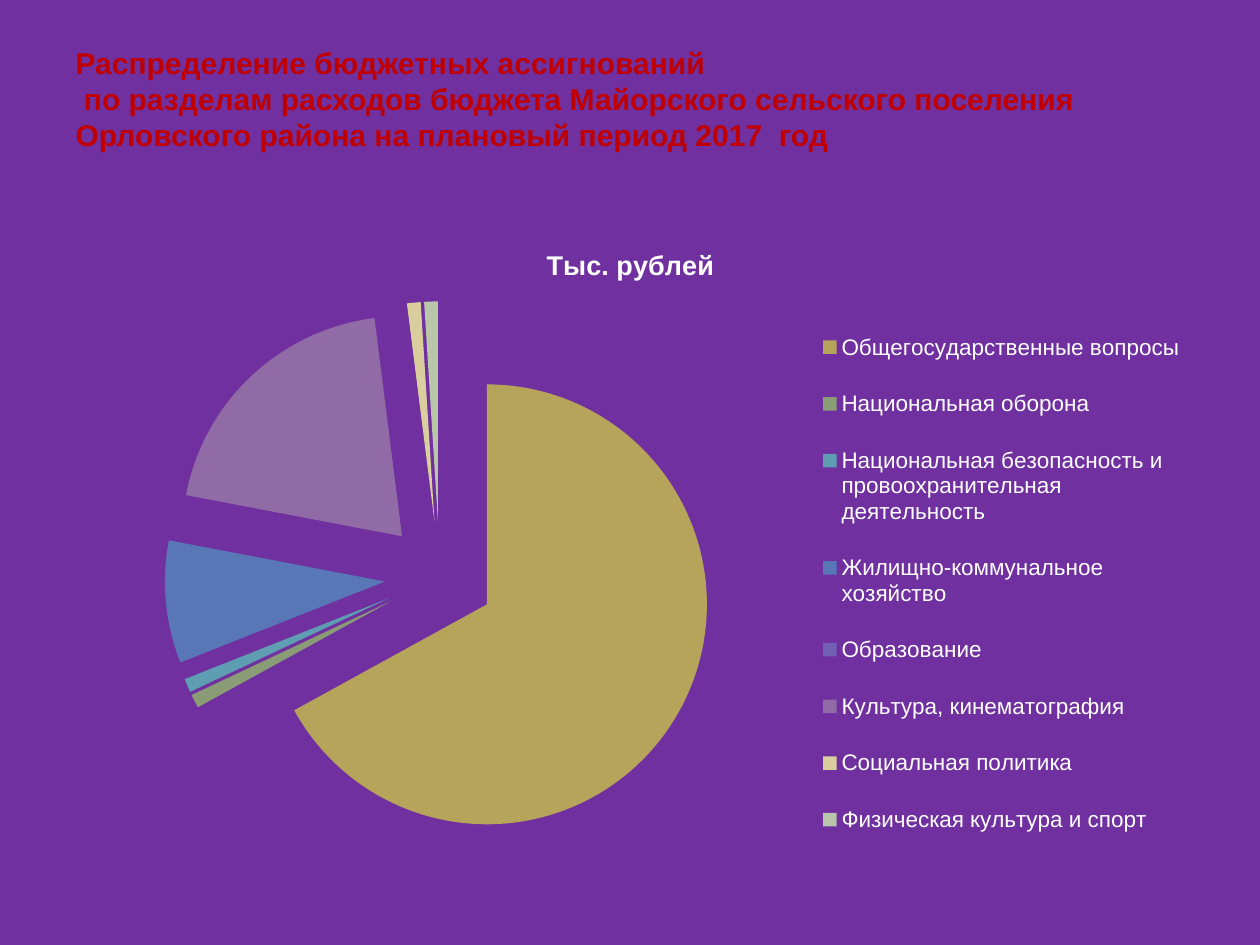
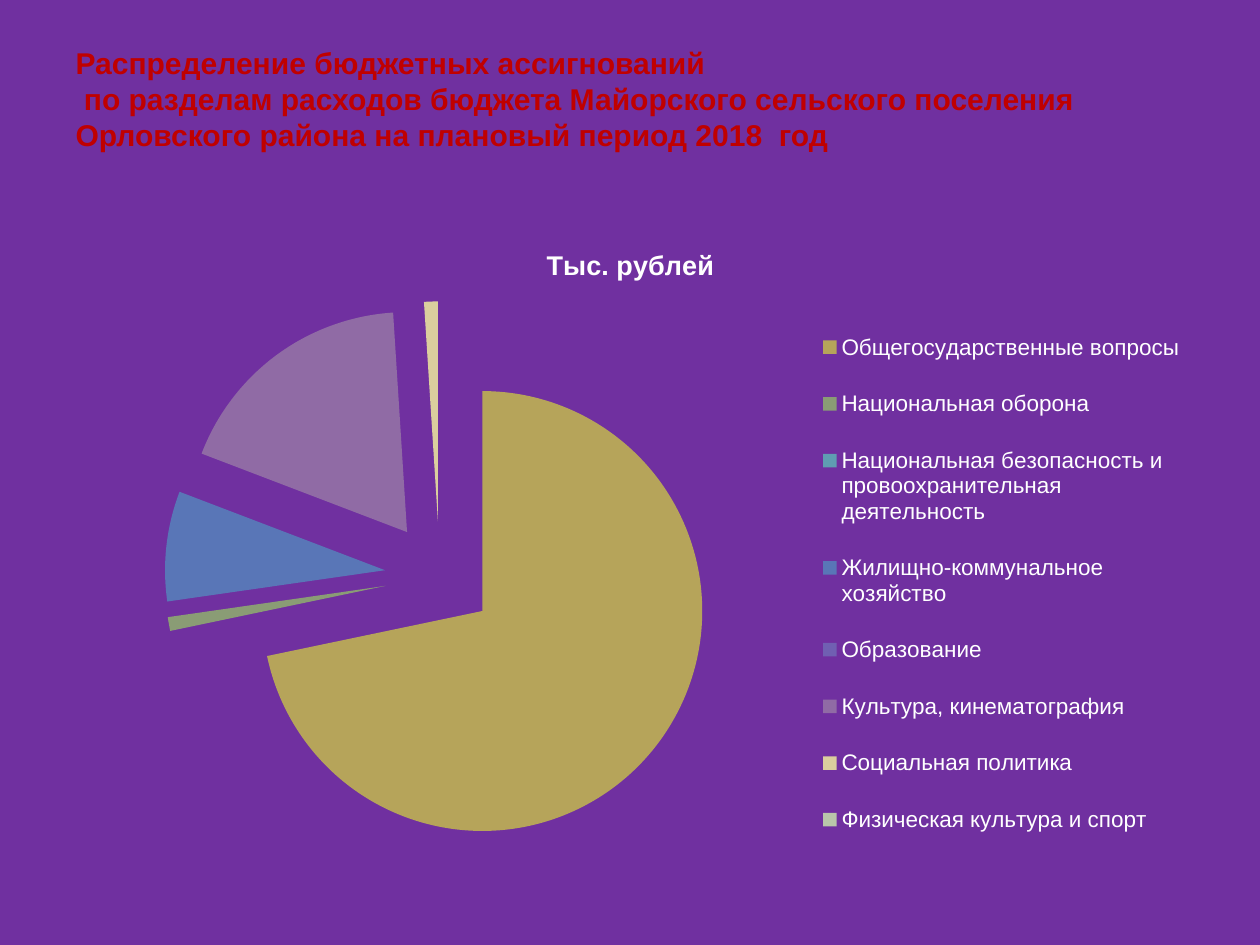
from pptx import Presentation
from pptx.chart.data import CategoryChartData
from pptx.dml.color import RGBColor
from pptx.enum.chart import XL_CHART_TYPE as ChartType, XL_LEGEND_POSITION as LegendPosition
from pptx.enum.text import MSO_ANCHOR as Anchor
from pptx.oxml import parse_xml
from pptx.oxml.ns import nsdecls
from pptx.util import Inches, Pt

FONT = "Arial"
PURPLE, RED, WHITE = "7030A0", "C00000", "FFFFFF"
HEADING = (
    "Распределение бюджетных ассигнований\v"
    " по разделам расходов бюджета Майорского сельского поселения "
    "Орловского района на плановый период {year}  год"
)
UNIT = "Тыс. рублей"
SECTIONS = {
    "Общегосударственные вопросы": "B6A45A",
    "Национальная оборона": "8A9C75",
    "Национальная безопасность и провоохранительная деятельность": "5F9DB2",
    "Жилищно-коммунальное хозяйство": "5976B7",
    "Образование": "705FB2",
    "Культура, кинематография": "906BA5",
    "Социальная политика": "DBCE9E",
    "Физическая культура и спорт": "B9C6AA",
}
SPENDING = {
    2017: [67, 1, 1, 9, 0, 20, 1, 1],
    2018: [71, 1, 0, 8, 0, 18, 1, 0],
}
EXPLOSION = 25

# Left, top, width, height in inches on the page
CHART_AREA = (0.76, 2.51, 12.49, 7.1)
PIE_AREA = (1.83, 3.35, 6.11, 6.11)
LEGEND_AREA = (9.05, 3.37, 4.15, 6.23)


def color(value):
    return RGBColor.from_string(value)


def style_font(font, size, fill, bold=False):
    font.name, font.size, font.bold = FONT, Pt(size), bold
    font.color.rgb = color(fill)


def add_heading(page, year):
    box = page.shapes.add_textbox(Inches(0.7), Inches(0.42), Inches(12.6), Inches(1.75))
    frame = box.text_frame
    frame.word_wrap = True
    frame.vertical_anchor = Anchor.TOP
    frame.margin_left = frame.margin_right = Inches(0.14)
    frame.margin_top = frame.margin_bottom = Inches(0.07)
    para = frame.paragraphs[0]
    para.text = HEADING.format(year=year)
    style_font(para.font, 24, RED, bold=True)


def manual_layout(area, target=""):
    """Return a c:layout that puts a chart part at an area of the page."""
    left, top, width, height = CHART_AREA
    shares = {
        "x": (area[0] - left) / width,
        "y": (area[1] - top) / height,
        "w": area[2] / width,
        "h": area[3] / height,
    }
    modes = '<c:xMode val="edge"/><c:yMode val="edge"/>'
    sizes = "".join(f'<c:{name} val="{share:.4f}"/>' for name, share in shares.items())
    return parse_xml(
        f'<c:layout {nsdecls("c")}><c:manualLayout>{target}{modes}{sizes}'
        "</c:manualLayout></c:layout>"
    )


def place_pie(chart):
    plot_area = chart.plots[0]._element.getparent()
    for layout in plot_area.findall("{*}layout"):
        plot_area.remove(layout)
    plot_area.insert(0, manual_layout(PIE_AREA, '<c:layoutTarget val="inner"/>'))


def place_legend(legend):
    element = legend._element
    for layout in element.findall("{*}layout"):
        element.remove(layout)
    element.find("{*}legendPos").addnext(manual_layout(LEGEND_AREA))


def style_slices(series):
    for index, fill_color in enumerate(SECTIONS.values()):
        fill = series.points[index].format.fill
        fill.solid()
        fill.fore_color.rgb = color(fill_color)
    explosion = parse_xml(f'<c:explosion {nsdecls("c")} val="{EXPLOSION}"/>')
    series._element.find("{*}dPt").addprevious(explosion)


def add_pie(page, amounts):
    data = CategoryChartData()
    data.categories = list(SECTIONS)
    data.add_series(UNIT, amounts)
    area = [Inches(length) for length in CHART_AREA]
    chart = page.shapes.add_chart(ChartType.PIE, *area, data).chart
    style_font(chart.font, 18, WHITE)

    chart.has_title = True
    para = chart.chart_title.text_frame.paragraphs[0]
    para.text = UNIT
    style_font(para.font, 21.6, WHITE, bold=True)
    chart.chart_title.include_in_layout = False

    chart.has_legend = True
    chart.legend.position = LegendPosition.RIGHT
    chart.legend.include_in_layout = False
    style_font(chart.legend.font, 18, WHITE)
    place_legend(chart.legend)

    chart.plots[0].vary_by_categories = True
    style_slices(chart.plots[0].series[0])
    place_pie(chart)


def main():
    deck = Presentation()
    deck.slide_width, deck.slide_height = Inches(14), Inches(10.5)
    for year, amounts in SPENDING.items():
        page = deck.slides.add_slide(deck.slide_layouts[6])
        page.background.fill.solid()
        page.background.fill.fore_color.rgb = color(PURPLE)
        add_heading(page, year)
        add_pie(page, amounts)
    deck.save("out.pptx")


if __name__ == "__main__":
    main()
